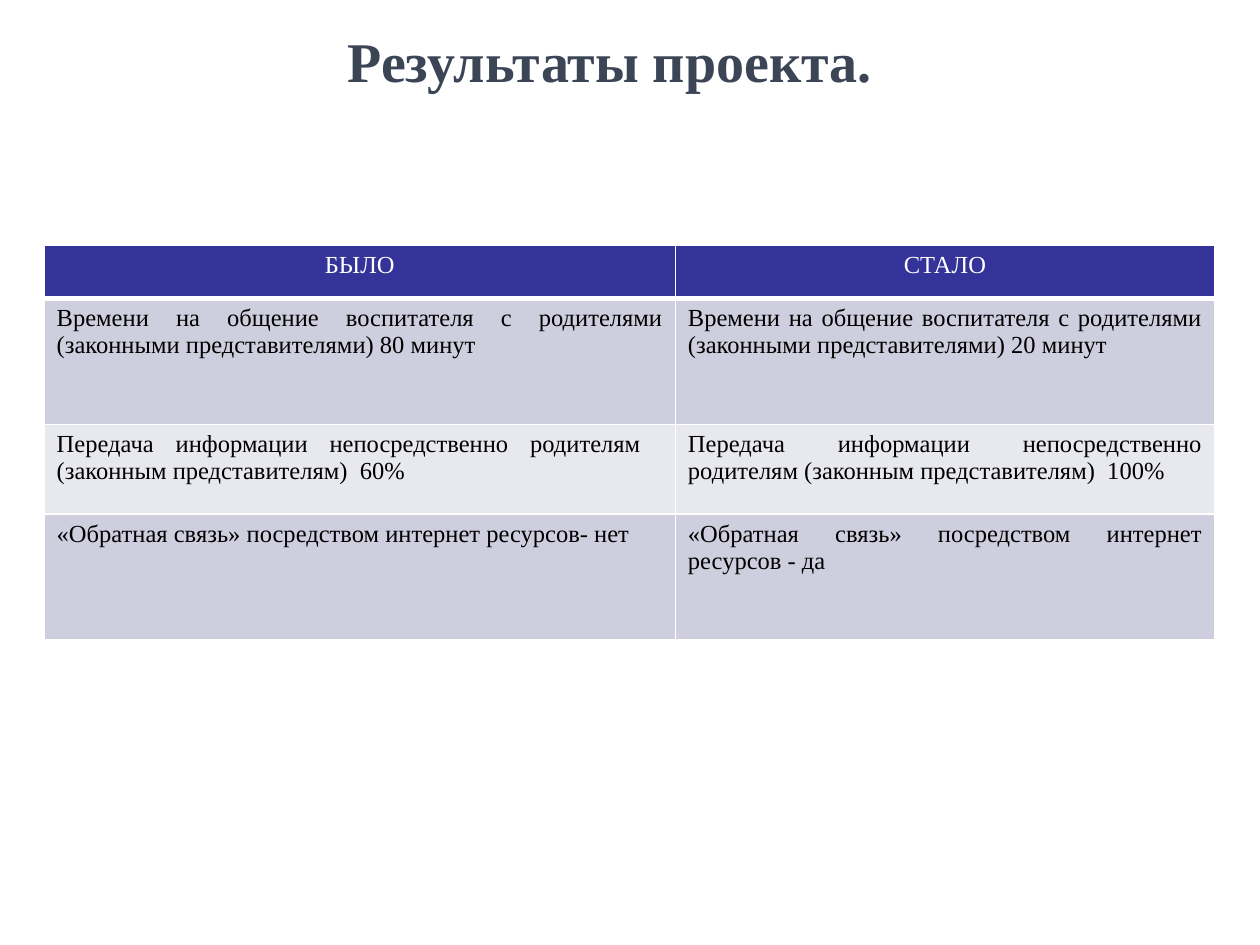
from pptx import Presentation
from pptx import util as u
from pptx.dml.color import RGBColor
from pptx.enum import text
from pptx.oxml import parse_xml
from pptx.oxml.ns import nsdecls

COLORS = {
    "title": "3B4555",
    "header": "333399",
    "band_dark": "CECEDE",
    "band_light": "E8E8EF",
    "white": "FFFFFF",
    "black": "000000",
}
FONT = "Times New Roman"


def add_span(para, wording, size, color, bold=False):
    span = para.add_run()
    span.text = wording
    span.font.name = FONT
    span.font.size = u.Pt(size)
    span.font.bold = bold
    span.font.color.rgb = RGBColor.from_string(COLORS[color])


def add_borders(cell, bottom):
    """Draw white cell borders, 1 pt except for the given bottom width."""
    properties = cell._tc.get_or_add_tcPr()
    widths = {"lnL": 1, "lnR": 1, "lnT": 1, "lnB": bottom}
    for position, (side, width) in enumerate(widths.items()):
        properties.insert(position, parse_xml(
            f'<a:{side} {nsdecls("a")} w="{u.Pt(width)}"><a:solidFill>'
            f'<a:srgbClr val="{COLORS["white"]}"/></a:solidFill></a:{side}>'))


deck = Presentation()
deck.slide_width = u.Inches(10)
deck.slide_height = u.Inches(7.5)
page = deck.slides.add_slide(deck.slide_layouts[6])

title = page.shapes.add_textbox(u.Inches(2.64), u.Inches(0.13), u.Inches(4.4), u.Inches(1.18))
frame = title.text_frame
frame.word_wrap = False
frame.vertical_anchor = text.MSO_ANCHOR.TOP
frame.margin_top = u.Inches(0.08)
para = frame.paragraphs[0]
para.alignment = text.PP_ALIGN.CENTER
add_span(para, "Результаты проекта.", 32, "title", bold=True)

results = [
    ("БЫЛО", "СТАЛО"),
    ("Времени на общение воспитателя с родителями (законными представителями) 80 минут",
     "Времени на общение воспитателя с родителями (законными представителями) 20 минут"),
    ("Передача информации непосредственно родителям  (законным представителям)  60%",
     "Передача информации непосредственно родителям (законным представителям)  100%"),
    ("«Обратная связь» посредством интернет ресурсов- нет",
     "«Обратная связь» посредством интернет ресурсов - да"),
]
column_widths = [5.01, 4.28]
row_heights = [0.42, 1, 0.71, 1]
row_fills = ["header", "band_dark", "band_light", "band_dark"]

table = page.shapes.add_table(
    len(results), len(column_widths), u.Inches(0.35), u.Inches(1.95),
    u.Inches(sum(column_widths)), u.Inches(sum(row_heights))).table
for column, width in zip(table.columns, column_widths):
    column.width = u.Inches(width)

for row, height, fill, wordings in zip(table.rows, row_heights, row_fills, results):
    row.height = u.Inches(height)
    is_header = fill == "header"
    for cell, wording in zip(row.cells, wordings):
        cell.fill.solid()
        cell.fill.fore_color.rgb = RGBColor.from_string(COLORS[fill])
        add_borders(cell, bottom=3 if is_header else 1)
        para = cell.text_frame.paragraphs[0]
        para.alignment = text.PP_ALIGN.CENTER if is_header else text.PP_ALIGN.JUSTIFY
        add_span(para, wording, 14, "white" if is_header else "black")

deck.save("out.pptx")
